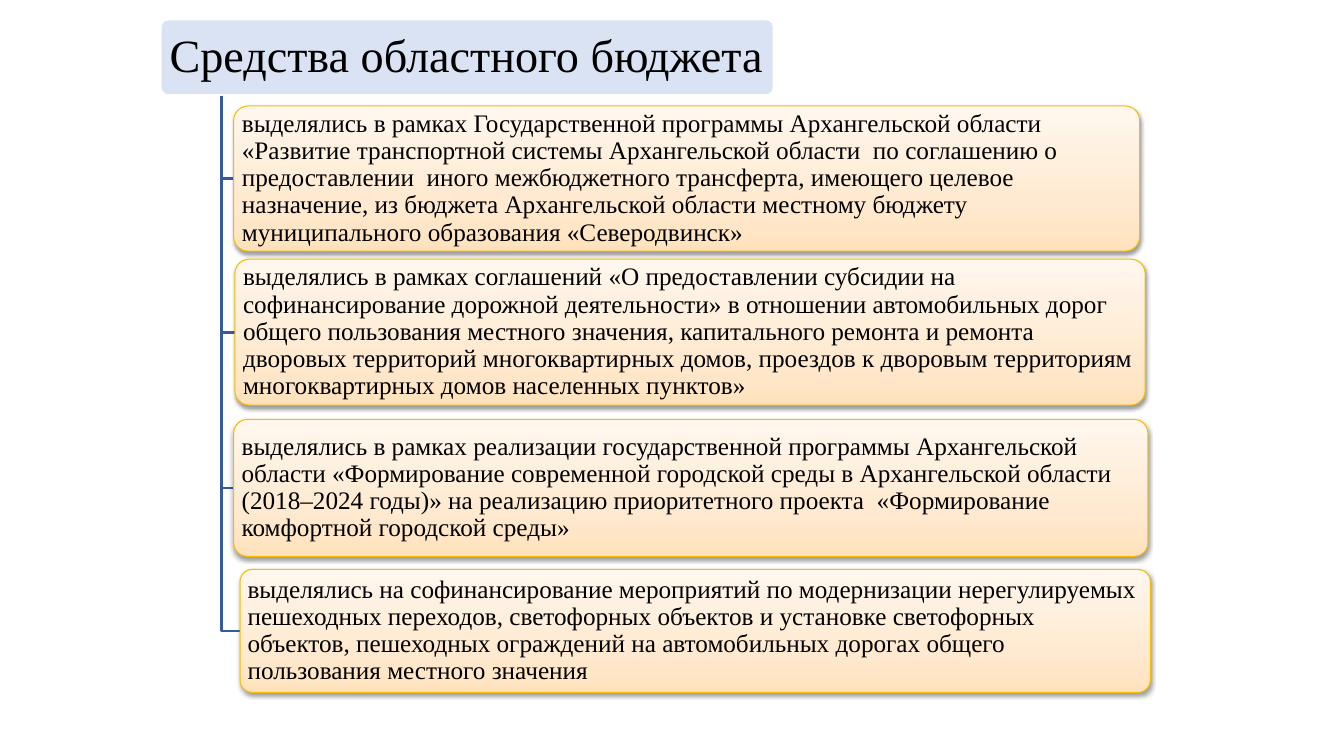
import copy

import pptx
import pptx.dml.color
import pptx.enum.shapes
import pptx.enum.text
import pptx.oxml
import pptx.oxml.ns
import pptx.util
from pptx.util import Cm

FONT = "Times New Roman"
TRUNK_LEFT, TRUNK_TOP = 5.59, 2.41
GRADIENT = [(0, "FFE2BD"), (0.35, "FFEAD1"), (1, "FFF7EE")]
SHADOW = (
    f'<a:outerShdw {pptx.oxml.ns.nsdecls("a")} blurRad="40000" dist="20000" '
    'dir="5400000" rotWithShape="0"><a:srgbClr val="000000">'
    '<a:alpha val="38000"/></a:srgbClr></a:outerShdw>'
)

TITLE = ("Средства областного бюджета", 4.04, 0.48, 15.47, 1.93)
SOURCES = [
    ("выделялись в рамках Государственной программы Архангельской области "
     "«Развитие транспортной системы Архангельской области  по соглашению "
     "о предоставлении  иного межбюджетного трансферта, имеющего целевое "
     "назначение, из бюджета Архангельской области местному бюджету "
     "муниципального образования «Северодвинск»",
     5.89, 2.67, 22.83, 3.66),
    ("выделялись в рамках соглашений «О предоставлении субсидии на "
     "софинансирование дорожной деятельности» в отношении автомобильных дорог "
     "общего пользования местного значения, капитального ремонта и ремонта "
     "дворовых территорий многоквартирных домов, проездов к дворовым территориям "
     "многоквартирных домов населенных пунктов»",
     5.92, 6.53, 22.94, 3.68),
    ("выделялись в рамках реализации государственной программы Архангельской "
     "области «Формирование современной городской среды в Архангельской области "
     "(2018–2024 годы)» на реализацию приоритетного проекта  «Формирование "
     "комфортной городской среды»",
     5.89, 10.57, 23.04, 3.45),
    ("выделялись на софинансирование мероприятий по модернизации нерегулируемых "
     "пешеходных переходов, светофорных объектов и установке светофорных "
     "объектов, пешеходных ограждений на автомобильных дорогах общего "
     "пользования местного значения",
     6.05, 14.35, 22.94, 3.1),
]


def rgb(value):
    return pptx.dml.color.RGBColor.from_string(value)


def apply_format(target, values):
    for name, value in values.items():
        setattr(target, name, value)


def set_line(shape, color, width):
    shape.line.color.rgb = rgb(color)
    shape.line.width = pptx.util.Pt(width)


def add_panel(slide, content, size, inset_x, inset_y):
    """Add a rounded panel with left-aligned text; its fill and line come later."""
    text, *bounds = content
    panel = slide.shapes.add_shape(
        pptx.enum.shapes.MSO_SHAPE.ROUNDED_RECTANGLE, *map(Cm, bounds))
    panel.adjustments[0] = 0.1
    panel.shadow.inherit = False
    apply_format(panel.text_frame, {
        "word_wrap": True,
        "vertical_anchor": pptx.enum.text.MSO_ANCHOR.MIDDLE,
        "margin_left": Cm(inset_x), "margin_right": Cm(inset_x),
        "margin_top": Cm(inset_y), "margin_bottom": Cm(inset_y),
    })
    paragraph = panel.text_frame.paragraphs[0]
    paragraph.text = text
    apply_format(paragraph, {
        "alignment": pptx.enum.text.PP_ALIGN.LEFT, "line_spacing": 0.9})
    apply_format(paragraph.font, {"name": FONT, "size": pptx.util.Pt(size)})
    paragraph.font.color.rgb = rgb("000000")
    return panel


def add_title(slide):
    title = add_panel(slide, TITLE, 33, 0.18, 0.13)
    title.fill.solid()
    title.fill.fore_color.rgb = rgb("DAE3F3")
    set_line(title, "FFFFFF", 2)


def add_branch(slide, source):
    """Draw the elbow from the title down to the middle of a source's left side."""
    _, left, top, _, height = source
    middle = top + height / 2
    outline = slide.shapes.build_freeform(Cm(TRUNK_LEFT), Cm(TRUNK_TOP))
    outline.add_line_segments(
        [(Cm(TRUNK_LEFT), Cm(middle)), (Cm(left), Cm(middle))], close=False)
    branch = outline.convert_to_shape()
    branch.shadow.inherit = False
    branch.fill.background()
    set_line(branch, "365B9D", 2)


def add_source(slide, source):
    panel = add_panel(slide, source, 18, 0.1, 0.08)
    panel.fill.gradient()
    panel.fill.gradient_angle = 90
    properties = panel.element.spPr
    stop_list = properties.find(".//" + pptx.oxml.ns.qn("a:gsLst"))
    stop_list.insert(1, copy.deepcopy(stop_list[0]))
    for stop, (position, color) in zip(panel.fill.gradient_stops, GRADIENT):
        stop.position = position
        stop.color.rgb = rgb(color)
    set_line(panel, "F9BC00", 0.75)
    effects = properties.find(pptx.oxml.ns.qn("a:effectLst"))
    effects.append(pptx.oxml.parse_xml(SHADOW))


def main():
    deck = pptx.Presentation()
    apply_format(deck, {"slide_width": Cm(33.87), "slide_height": Cm(19.05)})
    slide = deck.slides.add_slide(deck.slide_layouts[6])
    add_title(slide)
    for source in SOURCES:
        add_branch(slide, source)
        add_source(slide, source)
    deck.save("out.pptx")


if __name__ == "__main__":
    main()
